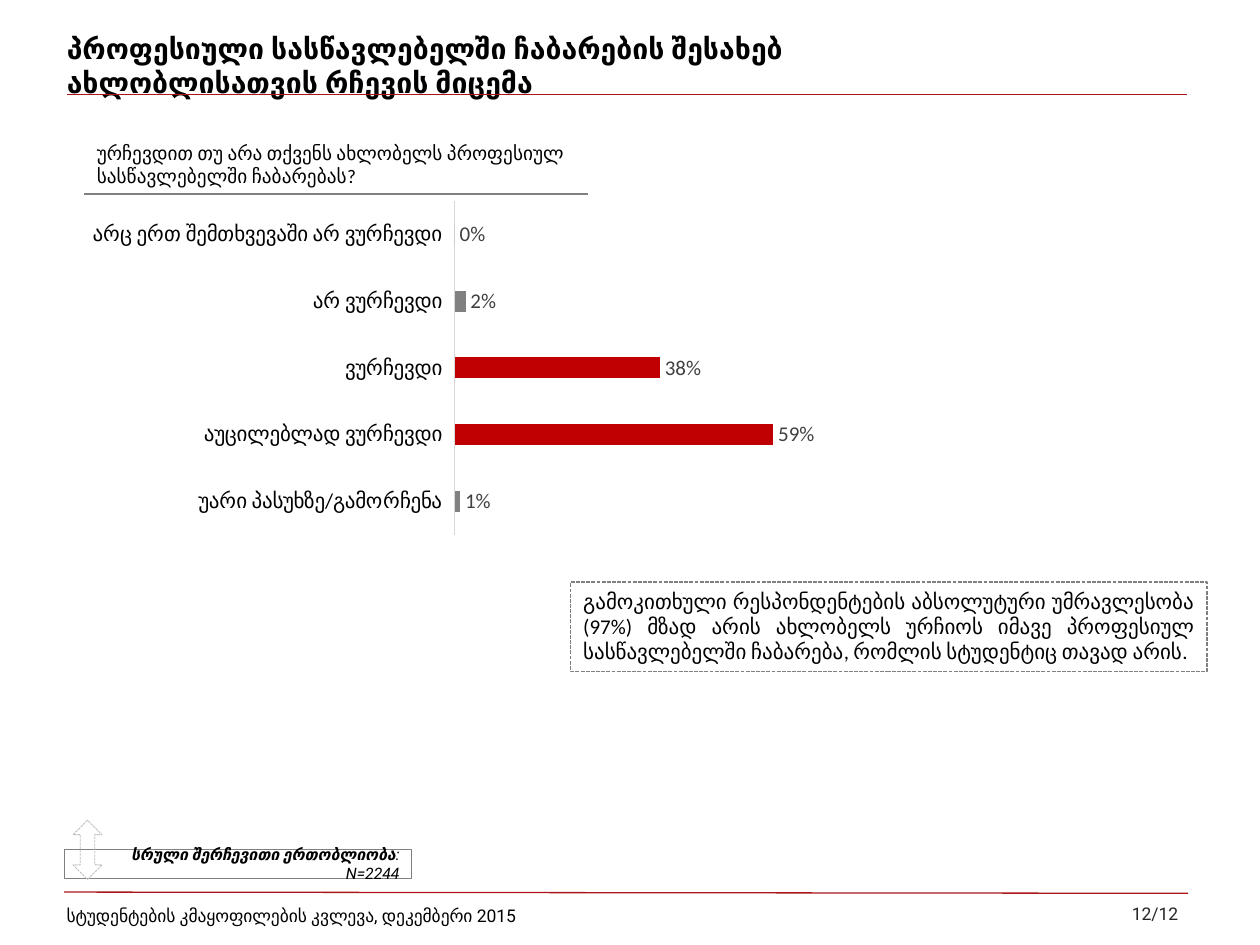
from lxml.etree import SubElement
from pptx import Presentation
from pptx.chart.data import CategoryChartData
from pptx.dml.color import RGBColor
from pptx.enum.chart import XL_CHART_TYPE, XL_LABEL_POSITION, XL_TICK_LABEL_POSITION, XL_TICK_MARK
from pptx.enum.dml import MSO_LINE
from pptx.enum.shapes import MSO_CONNECTOR, MSO_SHAPE
from pptx.enum.text import MSO_ANCHOR, PP_ALIGN
from pptx.oxml import parse_xml
from pptx.oxml.ns import nsdecls, qn
from pptx.util import Pt

PX = 9144
COLORS = {name: RGBColor.from_string(value) for name, value in {
    "black": "000000", "rule": "AC161B", "bar": "808080", "accent": "C00000",
    "page": "262626", "label": "404040", "axis": "D9D9D9", "arrow": "BFBFBF",
}.items()}


def write(sp, text, font, size, color="black", align=PP_ALIGN.LEFT, anchor=MSO_ANCHOR.MIDDLE):
    tf = sp.text_frame
    tf.word_wrap = True
    tf.vertical_anchor = anchor
    p = tf.paragraphs[0]
    p.alignment = align
    p.font.name = font
    p.font.size = Pt(size)
    p.font.color.rgb = COLORS[color]
    p.add_run().text = text
    return p


def outline(sp, color, width, dash=None):
    sp.shadow.inherit = False
    sp.fill.background()
    sp.line.color.rgb = COLORS[color]
    sp.line.width = Pt(width)
    if dash:
        sp.line.dash_style = dash


prs = Presentation()
prs.slide_width = 1000 * PX
prs.slide_height = 750 * PX
s = prs.slides.add_slide(prs.slide_layouts[5])

title = s.shapes.title
title.left, title.top, title.width, title.height = [n * PX for n in (43, 29, 780, 45)]
p = write(title, "პროფესიული სასწავლებელში ჩაბარების შესახებ ახლობლისათვის რჩევის მიცემა", "Roboto", 16.2)
p.font.bold = True

for x1, y1, x2, y2, color in [
    (51, 708, 943, 709, "rule"),
    (53, 75, 942, 75, "rule"),
    (67, 154, 467, 154, "bar"),
]:
    line = s.shapes.add_connector(MSO_CONNECTOR.STRAIGHT, x1 * PX, y1 * PX, x2 * PX, y2 * PX)
    line.line.color.rgb = COLORS[color]
    line.line.width = Pt(0.75)
    SubElement(line._element.spPr, qn("a:effectLst"))

for x, y, w, h, text, font, size, color, align, anchor in [
    (792, 704, 153, 42, "12/12", "Roboto", 10, "page", PP_ALIGN.RIGHT, MSO_ANCHOR.MIDDLE),
    (43, 707, 585, 40, "სტუდენტების კმაყოფილების კვლევა, დეკემბერი 2015",
     "Roboto", 10, "black", PP_ALIGN.LEFT, MSO_ANCHOR.MIDDLE),
    (67, 107, 417, 47, "ურჩევდით თუ არა თქვენს ახლობელს პროფესიულ სასწავლებელში ჩაბარებას?",
     "Calibri", 11, "black", PP_ALIGN.LEFT, MSO_ANCHOR.TOP),
]:
    sp = s.shapes.add_textbox(x * PX, y * PX, w * PX, h * PX)
    write(sp, text, font, size, color, align, anchor)

sample = s.shapes.add_shape(MSO_SHAPE.RECTANGLE, 51 * PX, 674 * PX, 276 * PX, 23 * PX)
outline(sample, "bar", 0.5)
p = write(sample, "სრული შერჩევითი ერთობლიობა", "Roboto", 9, align=PP_ALIGN.RIGHT)
p.font.italic = True
p.runs[0].font.bold = True
p.add_run().text = ": N=2244"

arrow = s.shapes.add_shape(MSO_SHAPE.UP_DOWN_ARROW, 58 * PX, 651 * PX, 23 * PX, 47 * PX)
outline(arrow, "arrow", 0.5, MSO_LINE.SQUARE_DOT)

data = CategoryChartData(number_format="0%")
data.categories = ["არც ერთ შემთხვევაში არ ვურჩევდი", "არ ვურჩევდი", "ვურჩევდი",
                   "აუცილებლად ვურჩევდი", "უარი პასუხზე/გამორჩენა"]
data.add_series("Series 1", [0, 0.02, 0.38, 0.59, 0.01])
chart = s.shapes.add_chart(XL_CHART_TYPE.BAR_CLUSTERED, 67 * PX, 154 * PX, 606 * PX, 276 * PX, data).chart
chart.has_legend = False
chart.has_title = False
chart.font.name = "Calibri"
chart.font.size = Pt(10)
chart.font.color.rgb = COLORS["black"]

cat = chart.category_axis
cat.reverse_order = True
cat.major_tick_mark = XL_TICK_MARK.NONE
cat.tick_label_position = XL_TICK_LABEL_POSITION.LOW
cat.tick_labels.font.size = Pt(12)
cat.format.line.color.rgb = COLORS["axis"]
cat.format.line.width = Pt(0.75)

val = chart.value_axis
val.visible = False
val.has_major_gridlines = False
val.minimum_scale = 0
val.maximum_scale = 0.7

plot = chart.plots[0]
plot.gap_width = 219
plot.vary_by_categories = False
series = plot.series[0]
series.format.fill.solid()
series.format.fill.fore_color.rgb = COLORS["bar"]
for i in (2, 3):
    fill = series.points[i].format.fill
    fill.solid()
    fill.fore_color.rgb = COLORS["accent"]

labels = series.data_labels
labels.show_value = True
labels.number_format = "0%"
labels.number_format_is_linked = False
labels.position = XL_LABEL_POSITION.OUTSIDE_END
labels.font.name = "Calibri"
labels.font.size = Pt(12)
labels.font.color.rgb = COLORS["label"]

area = chart._chartSpace.chart.plotArea
for old in area.findall(qn("c:layout")):
    area.remove(old)
area.insert(0, parse_xml(
    f'<c:layout {nsdecls("c")}><c:manualLayout><c:layoutTarget val="inner"/>'
    '<c:xMode val="edge"/><c:yMode val="edge"/>'
    '<c:x val="0.485"/><c:y val="0.02"/><c:w val="0.495"/><c:h val="0.96"/>'
    '</c:manualLayout></c:layout>'))

note = s.shapes.add_shape(MSO_SHAPE.RECTANGLE, 453 * PX, 462 * PX, 505 * PX, 71 * PX)
outline(note, "bar", 0.75, MSO_LINE.SQUARE_DOT)
write(note, "გამოკითხული რესპონდენტების აბსოლუტური უმრავლესობა (97%) მზად არის ახლობელს ურჩიოს "
      "იმავე პროფესიულ სასწავლებელში ჩაბარება, რომლის სტუდენტიც თავად არის.",
      "Calibri", 12, align=PP_ALIGN.JUSTIFY, anchor=MSO_ANCHOR.TOP)

prs.save("out.pptx")
